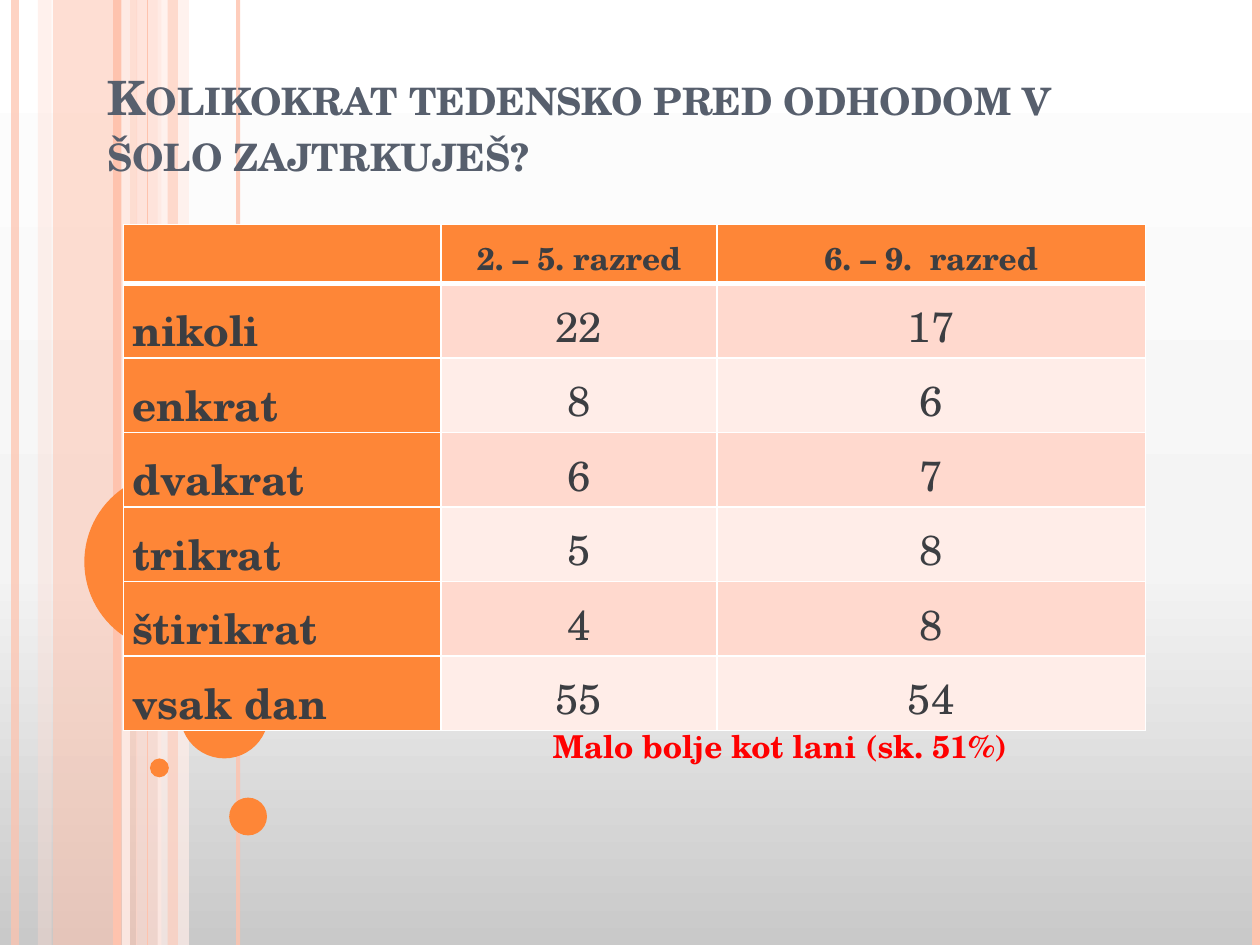
from copy import deepcopy
from lxml import etree
from pptx import Presentation
from pptx.dml.color import RGBColor
from pptx.enum import shapes, text
from pptx.oxml import parse_xml
from pptx.oxml.ns import nsdecls, qn
from pptx.util import Pt

FONT = "TeX Gyre Schola"
ORANGE = RGBColor(0xFE, 0x86, 0x37)
SALMON = RGBColor(0xFE, 0xC3, 0xAE)
PINK = RGBColor(0xFF, 0xD9, 0xCE)
PALE = RGBColor(0xFF, 0xED, 0xE8)
SLATE = RGBColor(0x57, 0x5F, 0x6D)
CHARCOAL = RGBColor(0x3C, 0x3E, 0x42)
RED = RGBColor(0xFF, 0, 0)
SKY = [(0, RGBColor(0xC9, 0xC9, 0xC9)), (0.4, RGBColor(0xF4, 0xF4, 0xF4)),
       (1, RGBColor(0xFF, 0xFF, 0xFF))]


def set_font(paragraph, size, color, bold):
    font = paragraph.font
    font.name, font.size, font.bold = FONT, Pt(size), bold
    font.color.rgb = color


def set_opacity(element, percent):
    color = next(element.iter(qn("a:srgbClr")))
    etree.SubElement(color, qn("a:alpha")).set("val", str(percent * 1000))


deck = Presentation()
deck.slide_width, deck.slide_height = Pt(720), Pt(540)
slide = deck.slides.add_slide(deck.slide_layouts[5])

backdrop = slide.background.fill
backdrop.gradient()
backdrop.gradient_angle = 90
first_stop = next(slide.background._cSld.iter(qn("a:gs")))
first_stop.addnext(deepcopy(first_stop))
for stop, (position, color) in zip(backdrop.gradient_stops, SKY):
    stop.position = position
    stop.color.rgb = color

bands = [(30.2, 48.2, SALMON, 54), (21.6, 7.9, PINK, 36),
         (77.8, 14.4, PINK, 70), (90, 18, PALE, 71)]
stripes = [(8.6, SALMON, 4.5, 73), (72, PALE, 4.5, 83), (67, SALMON, 4.5, 100),
           (136.1, SALMON, 2.25, 82), (84.2, SALMON, 0.75, 100),
           (717.8, SALMON, 4.5, 100)]
narrow_band = [(95.8, 5.8, SALMON, 51)]
bubbles = [(48.2, 270, 102.2), (103, 383, 50.4), (85.7, 433.4, 10.8),
           (131, 455.8, 21.6), (149.8, 354.2, 28.8)]

for x, width, color, opacity in bands + narrow_band:
    band = slide.shapes.add_shape(shapes.MSO_SHAPE.RECTANGLE, Pt(x), 0, Pt(width), Pt(540))
    band.shadow.inherit = False
    band.fill.solid()
    band.fill.fore_color.rgb = color
    band.line.fill.background()
    set_opacity(band._element.spPr, opacity)

for x, color, width, opacity in stripes:
    stripe = slide.shapes.add_connector(shapes.MSO_CONNECTOR.STRAIGHT, Pt(x), 0, Pt(x), Pt(540))
    stripe.line.color.rgb = color
    stripe.line.width = Pt(width)
    set_opacity(stripe._element.spPr, opacity)
    etree.SubElement(stripe._element.spPr, qn("a:effectLst"))
band._element.getparent().append(band._element)

for x, y, diameter in bubbles:
    bubble = slide.shapes.add_shape(
        shapes.MSO_SHAPE.OVAL, Pt(x), Pt(y), Pt(diameter), Pt(diameter))
    bubble.shadow.inherit = False
    bubble.fill.solid()
    bubble.fill.fore_color.rgb = ORANGE
    bubble.line.fill.background()

question = slide.shapes.title
question._element.getparent().append(question._element)
question.left, question.top, question.width, question.height = Pt(54), Pt(31.7), Pt(612), Pt(108)
heading = question.text_frame
heading.text = "Kolikokrat tedensko pred odhodom v šolo zajtrkuješ?"
heading.vertical_anchor = text.MSO_ANCHOR.BOTTOM
heading.margin_bottom = Pt(36)
heading.paragraphs[0].alignment = text.PP_ALIGN.LEFT
set_font(heading.paragraphs[0], 27, SLATE, True)
heading.paragraphs[0].font._element.set("cap", "small")

remark = slide.shapes.add_textbox(Pt(308.9), Pt(411.8), Pt(303.1), Pt(45.4)).text_frame
remark.word_wrap = True
remark.text = "Malo bolje kot lani (sk. 51%)"
set_font(remark.paragraphs[0], 18, RED, True)

answers = [("", "2. – 5. razred", "6. – 9.  razred"),
           ("nikoli", "22", "17"),
           ("enkrat", "8", "6"),
           ("dvakrat", "6", "7"),
           ("trikrat", "5", "8"),
           ("štirikrat", "4", "8"),
           ("vsak dan", "55", "54")]
column_widths = [181.4, 157.7, 244.8]
row_heights = [33.8] + [42.6] * 6
breakfasts = slide.shapes.add_table(
    len(answers), 3, Pt(70.6), Pt(128.2), Pt(sum(column_widths)), Pt(sum(row_heights))).table
for column, width in zip(breakfasts.columns, column_widths):
    column.width = Pt(width)

for r, answer in enumerate(answers):
    breakfasts.rows[r].height = Pt(row_heights[r])
    for c, wording in enumerate(answer):
        cell = breakfasts.cell(r, c)
        is_header, is_label = r == 0, c == 0
        borders = {"L": 1, "R": 1, "T": 3 if r == 1 else 1, "B": 3 if is_header else 1}
        for side, width in borders.items():
            cell._tc.get_or_add_tcPr().append(parse_xml(
                f'<a:ln{side} {nsdecls("a")} w="{Pt(width)}"><a:solidFill>'
                f'<a:srgbClr val="FFFFFF"/></a:solidFill></a:ln{side}>'))
        cell.fill.solid()
        cell.fill.fore_color.rgb = ORANGE if is_header or is_label else PINK if r % 2 else PALE
        cell.margin_left = cell.margin_right = Pt(5)
        cell.margin_top = Pt(2.5 if is_label else 0)
        cell.margin_bottom = 0
        cell.vertical_anchor = text.MSO_ANCHOR.MIDDLE
        cell.text = wording
        entry = cell.text_frame.paragraphs[0]
        entry.line_spacing = 1.15
        entry.alignment = text.PP_ALIGN.LEFT if is_label else text.PP_ALIGN.CENTER
        set_font(entry, 18 if is_header else 24, CHARCOAL, is_header or is_label)

deck.save("out.pptx")
